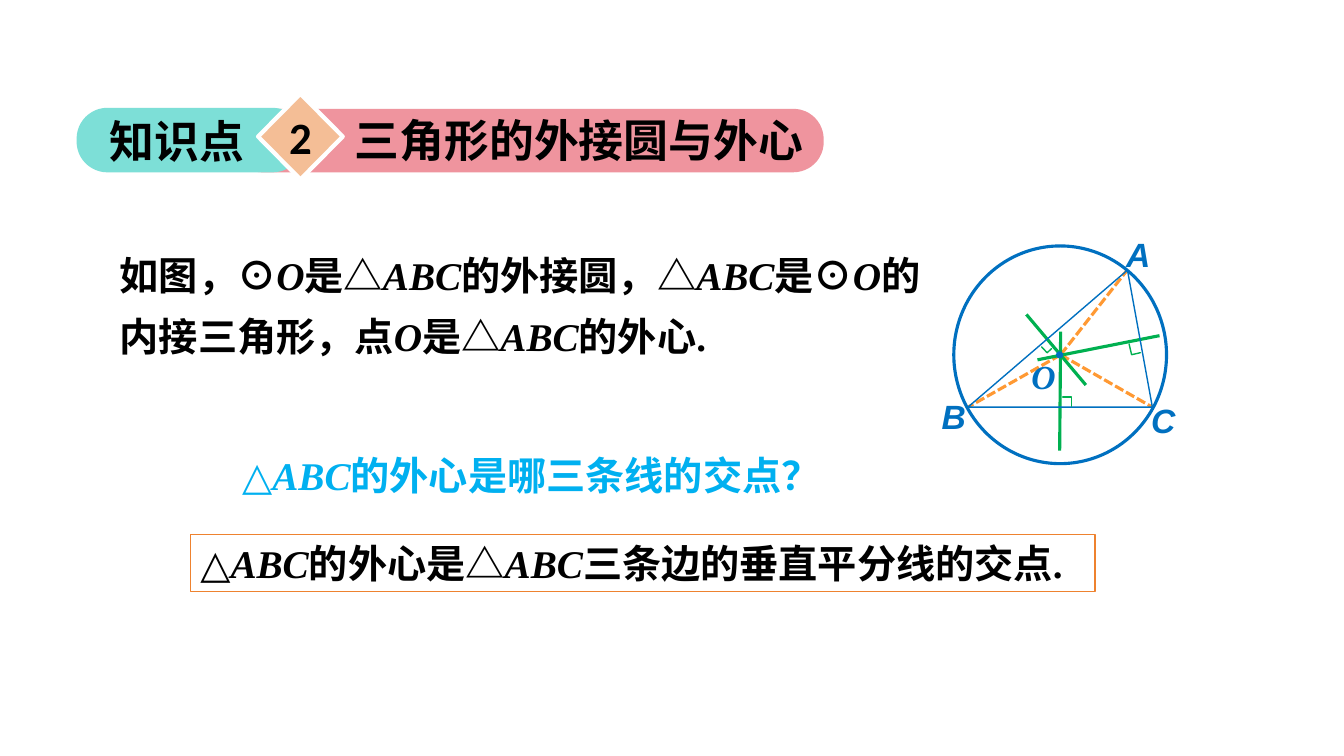
"""Build a geometry slide on the circumscribed circle and circumcenter of a triangle."""
import itertools
from dataclasses import dataclass

import lxml.etree
import pptx
import pptx.dml.color
import pptx.enum.dml
import pptx.enum.shapes
import pptx.enum.text
import pptx.oxml.ns
import pptx.util

Inches = pptx.util.Inches
RGBColor = pptx.dml.color.RGBColor
Shape = pptx.enum.shapes.MSO_SHAPE
Align = pptx.enum.text.PP_ALIGN

BLACK = RGBColor(0x00, 0x00, 0x00)
WHITE = RGBColor(0xFF, 0xFF, 0xFF)
PINK = RGBColor(0xEF, 0x94, 0x9E)
TEAL = RGBColor(0x7D, 0xDF, 0xD7)
PEACH = RGBColor(0xF4, 0xBE, 0x96)
SKY = RGBColor(0x00, 0xB0, 0xF0)
BLUE = RGBColor(0x00, 0x70, 0xC0)
GREEN = RGBColor(0x00, 0xB0, 0x50)
ORANGE = RGBColor(0xFF, 0x99, 0x33)
FRAME = RGBColor(0xEE, 0x82, 0x2F)

HAN = "Noto Sans CJK SC"
SERIF = "Times New Roman"

Point = tuple[float, float]
Box = tuple[float, float, float, float]


@dataclass(frozen=True)
class Segment:
    start: Point
    end: Point
    color: RGBColor
    dashed: bool = False


@dataclass(frozen=True)
class VertexLabel:
    letter: str
    left: float
    top: float


@dataclass(frozen=True)
class RightAngle:
    box: Box
    rotation: float


A, B, C, O = (11.18, 2.68), (9.6, 4.04), (11.43, 4.04), (10.52, 3.52)
RADII = [Segment(O, vertex, ORANGE, dashed=True) for vertex in (A, C, B)]
BISECTORS = [
    Segment((10.52, 3.29), (10.51, 4.47), GREEN),
    Segment((10.18, 3.12), (10.77, 3.82), GREEN),
    Segment((10.29, 3.57), (11.5, 3.33), GREEN),
]
VERTEX_LABELS = [
    VertexLabel("A", 11.07, 2.27),
    VertexLabel("B", 9.24, 3.88),
    VertexLabel("C", 11.32, 3.92),
]
RIGHT_ANGLES = [
    RightAngle((10.54, 3.94, 0.09, 0.09), 90),
    RightAngle((10.34, 3.42, 0.08, 0.06), 226.9),
    RightAngle((11.2, 3.41, 0.11, 0.09), 257),
]


def add_figure(slide, kind, box: Box, *, fill: RGBColor | None = None,
               line: RGBColor | None = None, width: float = 1,
               adjustments: tuple[float, ...] = (), rotation: float = 0):
    figure = slide.shapes.add_shape(kind, *map(Inches, box))
    figure.shadow.inherit = False
    figure.rotation = rotation
    for index, value in enumerate(adjustments):
        figure.adjustments[index] = value
    if fill is None:
        figure.fill.background()
    else:
        figure.fill.solid()
        figure.fill.fore_color.rgb = fill
    if line is None:
        figure.line.fill.background()
    else:
        figure.line.color.rgb = line
        figure.line.width = pptx.util.Pt(width)
    return figure


def add_segment(slide, segment: Segment) -> None:
    line = slide.shapes.add_connector(
        pptx.enum.shapes.MSO_CONNECTOR.STRAIGHT,
        *map(Inches, segment.start + segment.end))
    line.line.color.rgb = segment.color
    line.line.width = pptx.util.Pt(2.25)
    if segment.dashed:
        line.line.dash_style = pptx.enum.dml.MSO_LINE.SQUARE_DOT
        line.line._ln.find(pptx.oxml.ns.qn("a:prstDash")).set("val", "sysDash")
    properties = line._element.spPr
    lxml.etree.SubElement(properties, pptx.oxml.ns.qn("a:effectLst"))


def character_kind(character: str) -> str:
    if character == "⊙":
        return "circle"
    return "letter" if "A" <= character <= "Z" else "plain"


def write_text(holder, text: str, *, size: float, font: str = SERIF,
               color: RGBColor = BLACK, align=Align.LEFT, spacing: float = 1,
               wrap: bool = True, grow: bool = True) -> None:
    frame = holder.text_frame
    frame.word_wrap = wrap
    if grow:
        frame.auto_size = pptx.enum.text.MSO_AUTO_SIZE.SHAPE_TO_FIT_TEXT
    paragraph = frame.paragraphs[0]
    paragraph.alignment = align
    paragraph.line_spacing = spacing
    for kind, characters in itertools.groupby(text, character_kind):
        run = paragraph.add_run()
        run.text = "".join(characters)
        run.font.name = HAN if kind == "circle" else font
        run.font.size = pptx.util.Pt(size)
        run.font.bold = True
        run.font.italic = kind == "letter"
        run.font.color.rgb = color
        east_asian = lxml.etree.SubElement(
            run.font._element, pptx.oxml.ns.qn("a:ea"))
        east_asian.set("typeface", HAN)


def add_text(slide, box: Box, text: str, **text_format) -> None:
    write_text(slide.shapes.add_textbox(*map(Inches, box)), text, **text_format)


def add_heading(slide) -> None:
    for box, color in (((2.3, 1.08, 5.87, 0.63), PINK),
                       ((0.76, 1.07, 2.25, 0.64), TEAL)):
        add_figure(slide, Shape.ROUNDED_RECTANGLE, box, fill=color,
                   adjustments=(0.477,))
    add_text(slide, (0.99, 1.08, 1.59, 0.64), "知识点", size=32, font=HAN, wrap=False)
    add_text(slide, (3.42, 1.07, 4.74, 0.64), "三角形的外接圆与外心", size=32, font=HAN)
    number = add_figure(slide, Shape.DIAMOND, (2.56, 0.93, 0.84, 0.85),
                        fill=PEACH, line=WHITE, width=3)
    write_text(number, "2", size=32, font="Calibri", align=Align.CENTER,
               wrap=False, grow=False)


def add_statements(slide) -> None:
    add_text(slide, (1.09, 2.3, 8.36, 1.26),
             "如图，⊙O是△ABC的外接圆，△ABC是⊙O的内接三角形，点O是△ABC的外心.",
             size=28, spacing=1.3)
    add_text(slide, (1.21, 4.33, 8.12, 0.61), "△ABC的外心是哪三条线的交点？",
             size=28, color=SKY, align=Align.CENTER, spacing=1.2)
    answer = add_figure(slide, Shape.RECTANGLE, (1.89, 5.3, 8.97, 0.57), line=FRAME)
    answer.text_frame.vertical_anchor = pptx.enum.text.MSO_ANCHOR.TOP
    write_text(answer, "△ABC的外心是△ABC三条边的垂直平分线的交点.", size=28, wrap=False)


def add_diagram(slide) -> None:
    for segment in RADII + BISECTORS:
        add_segment(slide, segment)
    add_figure(slide, Shape.OVAL, (9.46, 2.44, 2.11, 2.16), line=BLUE, width=2.25)
    for label in VERTEX_LABELS:
        add_text(slide, (label.left, label.top, 0.43, 0.52), label.letter,
                 size=24, font="Arial", color=BLUE, wrap=False)
    add_figure(slide, Shape.ISOSCELES_TRIANGLE,
               (B[0], A[1], C[0] - B[0], B[1] - A[1]), line=BLUE,
               adjustments=(0.865,))
    add_figure(slide, Shape.OVAL, (10.48, 3.49, 0.06, 0.06), fill=BLUE,
               line=BLUE, width=0.75)
    add_text(slide, (10.13, 3.48, 0.42, 0.5), "O", size=24, color=BLUE)
    for mark in RIGHT_ANGLES:
        add_figure(slide, Shape.HALF_FRAME, mark.box, line=GREEN,
                   adjustments=(0, 0), rotation=mark.rotation)


def main() -> None:
    presentation = pptx.Presentation()
    presentation.slide_width = Inches(13.33)
    presentation.slide_height = Inches(7.5)
    slide = presentation.slides.add_slide(presentation.slide_layouts[6])
    add_heading(slide)
    add_statements(slide)
    add_diagram(slide)
    presentation.save("out.pptx")


if __name__ == "__main__":
    main()
